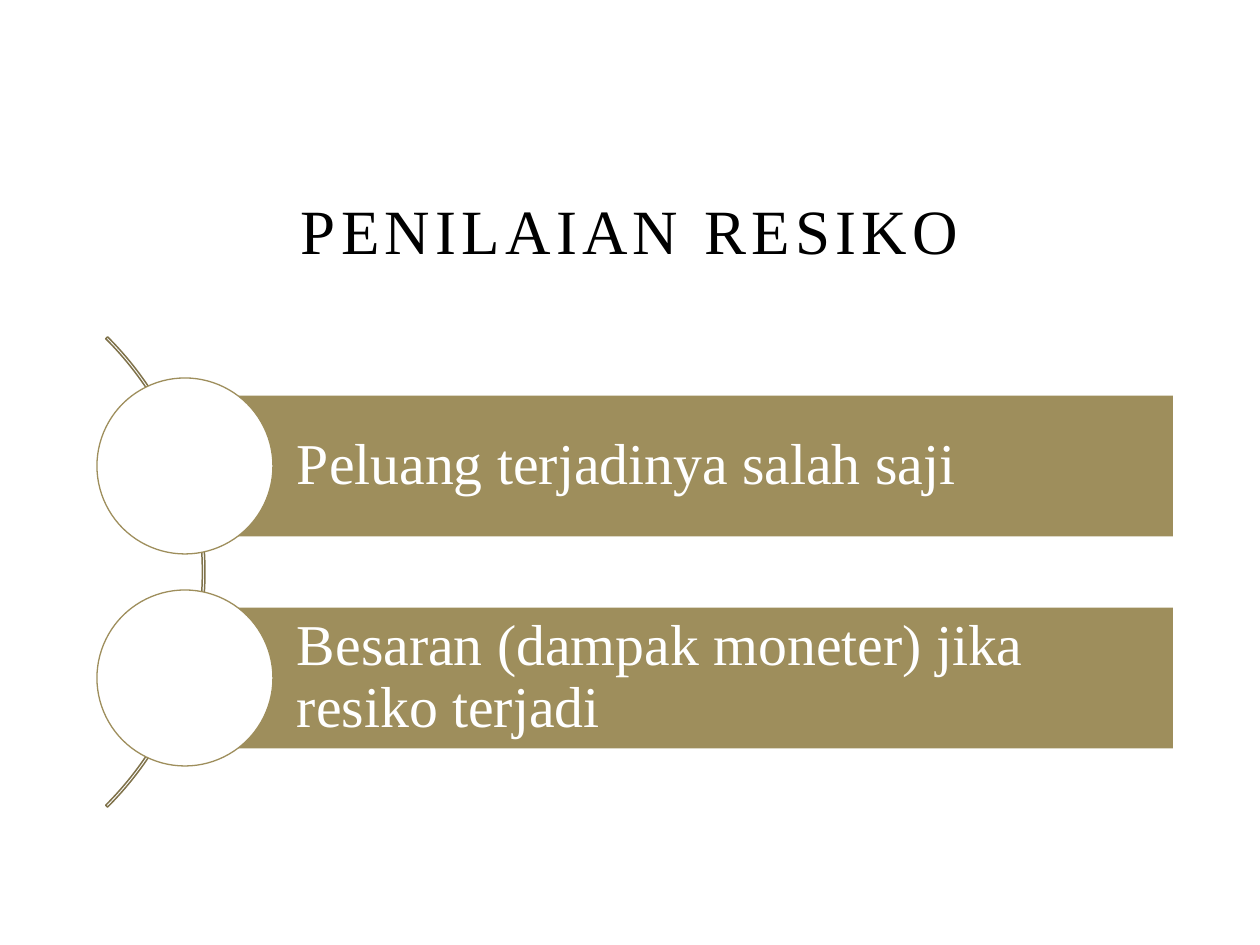
from dataclasses import dataclass

from pptx import Presentation
from pptx import util as u
from pptx.dml import color
from pptx.enum import shapes, text

PX = 914400 / 126


@dataclass(frozen=True)
class Theme:
    """Colours, font and type sizes of the slide."""
    ink: str = "000000"
    paper: str = "FFFFFF"
    gold: str = "9E8E5C"
    arc: str = "7F724A"
    font: str = "Times New Roman"
    title_size: int = 36
    risk_size: int = 33


THEME = Theme()
RISKS = ["Peluang terjadinya salah saji",
         "Besaran (dampak moneter) jika resiko terjadi"]


def px(length):
    """Turn px into EMU."""
    return u.Emu(round(length * PX))


def rgb(value):
    """Turn a hex string into a colour."""
    return color.RGBColor.from_string(value)


def apply(target, formats):
    """Set each attribute in formats on target."""
    for name, value in formats.items():
        setattr(target, name, value)


def write(frame, words, size, ink, align, frame_formats):
    """Put one formatted run in a text frame and return it."""
    apply(frame, {"word_wrap": True, "auto_size": text.MSO_AUTO_SIZE.NONE,
                  **frame_formats})
    paragraph = frame.paragraphs[0]
    paragraph.alignment = align
    run = paragraph.add_run()
    run.text = words
    apply(run.font, {"name": THEME.font, "size": u.Pt(size)})
    run.font.color.rgb = rgb(ink)
    return run


def add_figure(slide, kind, box, fill=None, line=None, width=0.75):
    """Add a flat preset shape with optional fill and outline."""
    figure = slide.shapes.add_shape(kind, *map(px, box))
    figure.shadow.inherit = False
    for paint, value in ((figure.fill, fill), (figure.line.fill, line)):
        if value:
            paint.solid()
            paint.fore_color.rgb = rgb(value)
        else:
            paint.background()
    if line:
        figure.line.width = u.Pt(width)
    return figure


def build_title(slide, box, words):
    """Place the spaced heading in the title placeholder."""
    title = slide.shapes.title
    apply(title, dict(zip(("left", "top", "width", "height"), map(px, box))))
    run = write(title.text_frame, words, THEME.title_size, THEME.ink,
                text.PP_ALIGN.CENTER,
                {"vertical_anchor": text.MSO_ANCHOR.BOTTOM})
    run.font._element.set("spc", "300")


def build_arc(slide, box):
    """Draw the thin arc that bulges into the left of the box."""
    left, top, _, height = box
    diameter = 665
    arc = add_figure(slide, shapes.MSO_SHAPE.BLOCK_ARC,
                     (left + 108 - diameter, top + (height - diameter) / 2,
                      diameter, diameter), line=THEME.arc, width=0.85)
    for index, value in enumerate((189, 27, 0.004)):
        arc.adjustments[index] = value


def build_risk(slide, box, words):
    """Draw one risk bar with its circle at the left of the box."""
    left, top, width, height = box
    bar_height = height * 0.8
    bar = add_figure(slide, shapes.MSO_SHAPE.RECTANGLE,
                     (left + height / 2, top + (height - bar_height) / 2,
                      width - height / 2, bar_height), fill=THEME.gold)
    write(bar.text_frame, words, THEME.risk_size, THEME.paper,
          text.PP_ALIGN.LEFT,
          {"vertical_anchor": text.MSO_ANCHOR.MIDDLE,
           "margin_left": px(112), "margin_right": px(11),
           "margin_top": px(11), "margin_bottom": px(11)})
    bar.text_frame.paragraphs[0].line_spacing = 0.9
    add_figure(slide, shapes.MSO_SHAPE.OVAL, (left, top, height, height),
               fill=THEME.paper, line=THEME.gold)


def build_risks(slide, box, risks):
    """Stack the risks over the arc, spread evenly down the box."""
    left, top, width, height = box
    build_arc(slide, box)
    row = 176
    pitch = (height - row) / (len(risks) - 1)
    for index, words in enumerate(risks):
        build_risk(slide, (left, top + index * pitch, width, row), words)


def main():
    """Build and save the slide."""
    deck = Presentation()
    apply(deck, {"slide_width": px(1260), "slide_height": px(945)})
    slide = deck.slides.add_slide(deck.slide_layouts[5])
    build_title(slide, (189, 179, 882, 94), "PENILAIAN RESIKO")
    build_risks(slide, (97, 378, 1076, 388), RISKS)
    deck.save("out.pptx")


if __name__ == "__main__":
    main()
